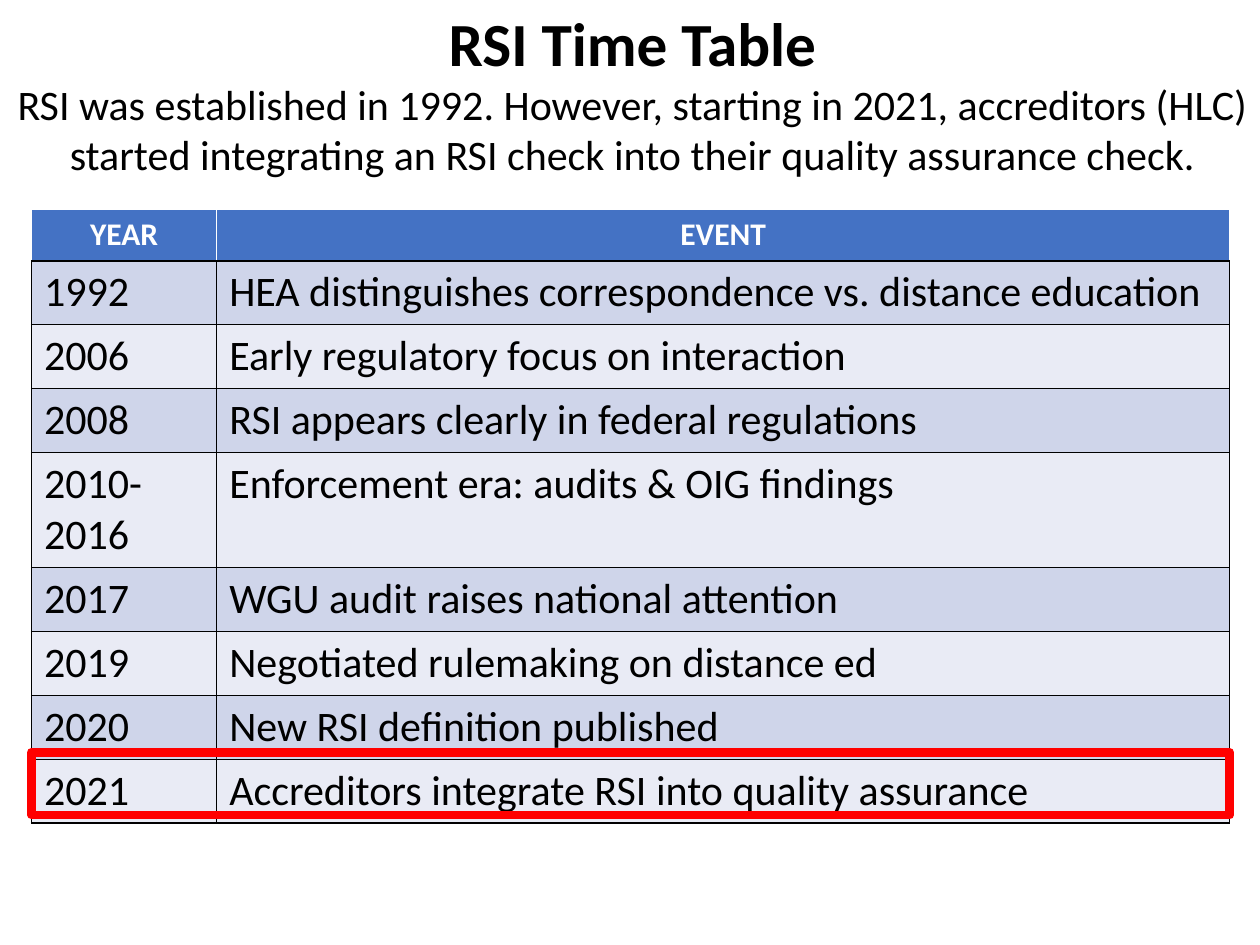
import pptx
import pptx.util
import pptx.dml.color
import pptx.enum.shapes
import pptx.enum.text
from lxml import etree

HEADING = [
    ("RSI Time Table", 35, True),
    ("RSI was established in 1992. However, starting in 2021, accreditors (HLC) "
     "started integrating an RSI check into their quality assurance check.", 24, False),
]
TIMELINE = [
    ("YEAR", "EVENT"),
    ("1992", "HEA distinguishes correspondence vs. distance education"),
    ("2006", "Early regulatory focus on interaction"),
    ("2008", "RSI appears clearly in federal regulations"),
    ("2010-2016", "Enforcement era: audits & OIG findings"),
    ("2017", "WGU audit raises national attention"),
    ("2019", "Negotiated rulemaking on distance ed"),
    ("2020", "New RSI definition published"),
    ("2021", "Accreditors integrate RSI into quality assurance"),
]
COLORS = {
    "text": "000000", "header_text": "FFFFFF", "header": "4472C4",
    "odd": "CFD5EA", "even": "E9EBF5", "grid": "000000",
    "header_grid": "FFFFFF", "highlight": "FF0000",
}
FONT = "Calibri"
LEFT, TOP = 0.25, 1.66
COLUMNS = [1.47, 8.04]
HEADER_HEIGHT, LINE_ROW, WRAPPED_ROW = 0.41, 0.5, 0.9
ROWS = [HEADER_HEIGHT] + [WRAPPED_ROW if "-" in year else LINE_ROW
                          for year, event in TIMELINE[1:]]

inches = pptx.util.Inches


def rgb(name):
    return pptx.dml.color.RGBColor.from_string(COLORS[name])


def add_text(paragraph, text, size, bold, color, centered):
    paragraph.alignment = (pptx.enum.text.PP_ALIGN.CENTER if centered
                           else pptx.enum.text.PP_ALIGN.LEFT)
    run = paragraph.add_run()
    run.text = text
    run.font.name = FONT
    run.font.size = pptx.util.Pt(size)
    run.font.bold = bold
    run.font.color.rgb = rgb(color)


def add_borders(cell, is_header):
    properties = cell._tc.get_or_add_tcPr()
    for side in "LRTB":
        color = "header_grid" if is_header and side != "B" else "grid"
        properties.append(etree.fromstring(
            f'<a:ln{side} xmlns:a="http://schemas.openxmlformats.org/drawingml/2006/main" w="12700">'
            f'<a:solidFill><a:srgbClr val="{COLORS[color]}"/></a:solidFill></a:ln{side}>'))


def add_heading(slide):
    heading = slide.shapes.title
    heading.left, heading.top = inches(0.02), inches(-0.01)
    heading.width, heading.height = inches(10), inches(1.5)
    frame = heading.text_frame
    frame.word_wrap = True
    frame.auto_size = pptx.enum.text.MSO_AUTO_SIZE.NONE
    frame.vertical_anchor = pptx.enum.text.MSO_ANCHOR.TOP
    for index, (text, size, bold) in enumerate(HEADING):
        paragraph = frame.add_paragraph() if index else frame.paragraphs[0]
        add_text(paragraph, text, size, bold, "text", True)


def add_timeline(slide):
    timeline = slide.shapes.add_table(
        len(ROWS), len(COLUMNS), inches(LEFT), inches(TOP),
        inches(sum(COLUMNS)), inches(sum(ROWS))).table
    for column, width in zip(timeline.columns, COLUMNS):
        column.width = inches(width)
    for number, (entry, height) in enumerate(zip(TIMELINE, ROWS)):
        timeline.rows[number].height = inches(height)
        is_header = number == 0
        shade = "header" if is_header else ("odd" if number % 2 else "even")
        for position, text in enumerate(entry):
            cell = timeline.cell(number, position)
            add_borders(cell, is_header)
            cell.fill.solid()
            cell.fill.fore_color.rgb = rgb(shade)
            add_text(cell.text_frame.paragraphs[0], text, 18 if is_header else 24,
                     is_header, "header_text" if is_header else "text", is_header)


def add_highlight(slide):
    highlight = slide.shapes.add_shape(
        pptx.enum.shapes.MSO_SHAPE.RECTANGLE, inches(LEFT),
        inches(TOP + sum(ROWS[:-1])), inches(sum(COLUMNS)), inches(ROWS[-1]))
    highlight.shadow.inherit = False
    highlight.fill.background()
    highlight.line.color.rgb = rgb("highlight")
    highlight.line.width = pptx.util.Pt(5)


def main():
    deck = pptx.Presentation()
    deck.slide_width, deck.slide_height = inches(10), inches(7.5)
    slide = deck.slides.add_slide(deck.slide_layouts.get_by_name("Title Only"))
    add_heading(slide)
    add_timeline(slide)
    add_highlight(slide)
    deck.save("out.pptx")


if __name__ == "__main__":
    main()
